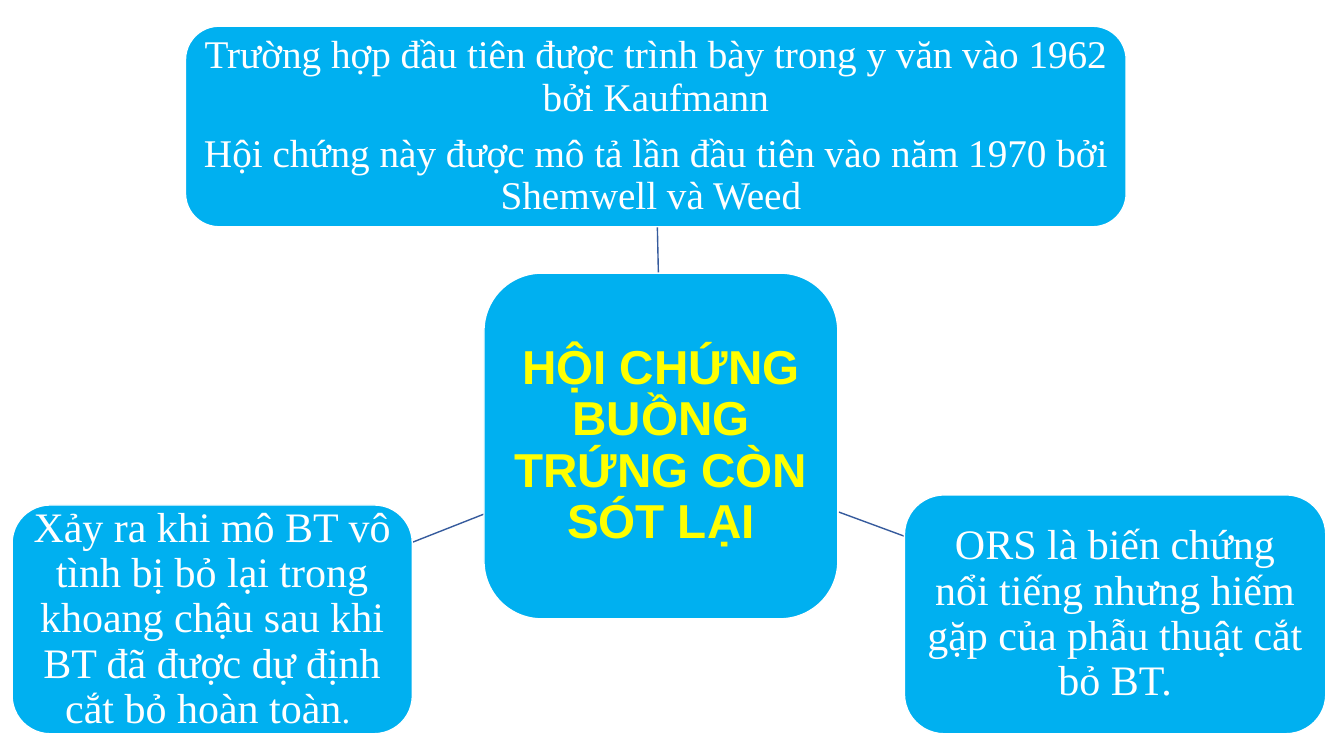
"""Build a radial diagram slide: one central topic linked to three facts."""
from lxml import etree
from pptx import Presentation
from pptx.dml.color import RGBColor
from pptx.enum.shapes import MSO_CONNECTOR, MSO_SHAPE
from pptx.enum.text import MSO_ANCHOR, PP_ALIGN
from pptx.oxml.ns import qn
from pptx.util import Inches, Pt

ROUNDED = MSO_SHAPE.ROUNDED_RECTANGLE
STRAIGHT = MSO_CONNECTOR.STRAIGHT
MIDDLE = MSO_ANCHOR.MIDDLE
CENTER = PP_ALIGN.CENTER

SKY = RGBColor(0x00, 0xB0, 0xF0)
NAVY = RGBColor(0x36, 0x5B, 0x9D)
WHITE = RGBColor(0xFF, 0xFF, 0xFF)
YELLOW = RGBColor(0xFF, 0xFF, 0x00)

HUB_FONT = {"name": "Arial", "bold": True}
FACT_FONT = {"name": "Times New Roman", "bold": False}

BOXES = [
    {"at": (4.8, 2.71, 3.51, 3.43), "inset": 0.09, "font": HUB_FONT, "color": YELLOW,
     "text": [[("HỘI CHỨNG BUỒNG TRỨNG CÒN SÓT LẠI", 34)]]},
    {"at": (1.84, 0.26, 9.33, 1.99), "inset": 0.08, "font": FACT_FONT, "color": WHITE,
     "text": [[("Trường hợp đầu tiên được trình bày trong y văn vào 1962 bởi Kaufmann", 28)],
              [("Hội chứng này được mô tả lần đầu tiên vào năm 1970 bởi Shemwell và Weed ", 28)]]},
    {"at": (8.97, 4.91, 4.18, 2.37), "inset": 0.08, "font": FACT_FONT, "color": WHITE,
     "text": [[("ORS là biến chứng nổi tiếng nhưng hiếm gặp của phẫu thuật cắt bỏ BT.", 30)]]},
    {"at": (0.12, 5.01, 3.97, 2.27), "inset": 0.08, "font": FACT_FONT, "color": WHITE,
     "text": [[("Xảy ra khi mô BT vô tình bị bỏ lại trong khoang chậu sau khi BT đã được "
                "dự định cắt bỏ hoàn toàn", 30), (". ", 25)]]},
]
SPOKES = [
    (6.53, 2.71, 6.52, 2.25),
    (8.32, 5.08, 8.97, 5.32),
    (4.8, 5.1, 4.09, 5.38),
]


def add_box(slide, box):
    sp = slide.shapes.add_shape(ROUNDED, *map(Inches, box["at"]))
    sp.shadow.inherit = False
    sp.fill.solid()
    sp.fill.fore_color.rgb = SKY
    sp.line.color.rgb = WHITE
    sp.line.width = Pt(1)
    tf = sp.text_frame
    tf.word_wrap = True
    tf.vertical_anchor = MIDDLE
    for side in ("left", "top", "right", "bottom"):
        setattr(tf, f"margin_{side}", Inches(box["inset"]))
    for i, runs in enumerate(box["text"]):
        p = tf.add_paragraph() if i else tf.paragraphs[0]
        p.alignment = CENTER
        p.line_spacing = 0.9
        p.space_after = Pt(round(runs[0][1] * 0.35, 1))
        for text, size in runs:
            r = p.add_run()
            r.text = text
            for key, value in {**box["font"], "size": Pt(size)}.items():
                setattr(r.font, key, value)
            r.font.color.rgb = box["color"]


def add_spoke(slide, ends):
    line = slide.shapes.add_connector(STRAIGHT, *map(Inches, ends))
    line.line.color.rgb = NAVY
    line.line.width = Pt(1)
    etree.SubElement(line._element.spPr, qn("a:effectLst"))


def main():
    prs = Presentation()
    prs.slide_width, prs.slide_height = Inches(13.33), Inches(7.5)
    slide = prs.slides.add_slide(prs.slide_layouts[6])
    for ends in SPOKES:
        add_spoke(slide, ends)
    for box in BOXES:
        add_box(slide, box)
    prs.save("out.pptx")


if __name__ == "__main__":
    main()
